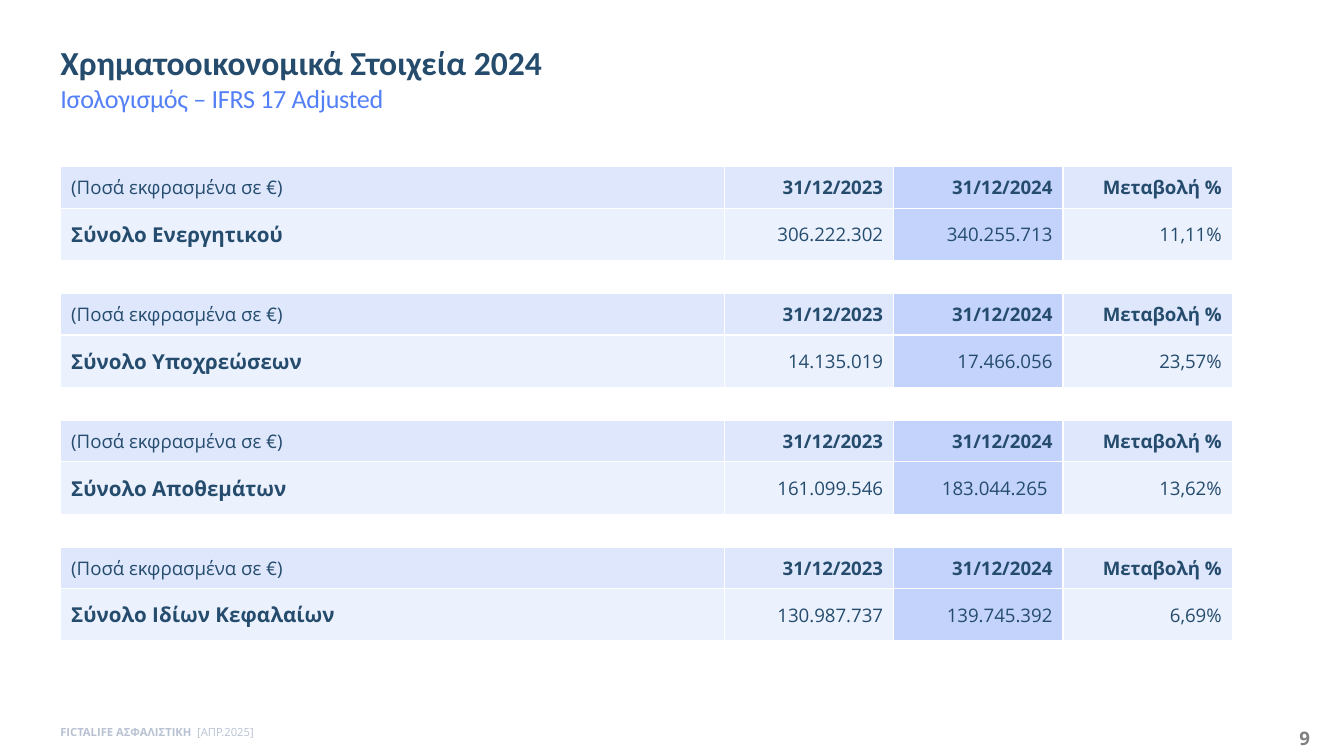
from lxml.etree import SubElement
from pptx import Presentation
from pptx.dml.color import RGBColor
from pptx.enum.text import MSO_ANCHOR, MSO_AUTO_SIZE, PP_ALIGN
from pptx.oxml.ns import qn
from pptx.util import Inches, Pt

NAVY, BLUE, WHITE = "254C6D", "5480F7", "FFFFFF"
HEAD, BODY, FOCUS = "DFE7FD", "ECF1FE", "C4D3FC"
SANS = "Open Sans"

LEFT, TOP, LAST = 0.45, 1.24, 4.07
HEIGHT = 0.71
COLS = [4.94, 1.26, 1.26, 1.26]
ROWS = [0.31, 0.39]
HEADER = ["(Ποσά εκφρασμένα σε €)", "31/12/2023", "31/12/2024", "Μεταβολή %"]
TOTALS = [
    ["Σύνολο Ενεργητικού", "306.222.302", "340.255.713", "11,11%"],
    ["Σύνολο Υποχρεώσεων", "14.135.019", "17.466.056", "23,57%"],
    ["Σύνολο Αποθεμάτων", "161.099.546", "183.044.265 ", "13,62%"],
    ["Σύνολο Ιδίων Κεφαλαίων", "130.987.737", "139.745.392", "6,69%"],
]
PITCH = (LAST - TOP) / (len(TOTALS) - 1)


def color(code):
    return RGBColor.from_string(code)


def add_run(para, text, size, code, bold=False, font=SANS):
    run = para.add_run()
    run.text = text
    run.font.size = Pt(size)
    run.font.name = font
    run.font.bold = bold
    run.font.color.rgb = color(code)
    return run


def set_title(slide):
    title = slide.shapes.title
    title.left, title.top = Inches(0.35), Inches(0.21)
    title.width, title.height = Inches(6.69), Inches(0.39)
    frame = title.text_frame
    frame.auto_size = MSO_AUTO_SIZE.NONE
    frame.vertical_anchor = MSO_ANCHOR.TOP
    frame.margin_left = frame.margin_right = Inches(0.1)
    frame.margin_top = frame.margin_bottom = Inches(0.1)
    para = frame.paragraphs[0]
    para.alignment = PP_ALIGN.LEFT
    add_run(para, "Χρηματοοικονομικά Στοιχεία 2024", 18, NAVY, True, "Calibri")
    para.add_line_break()
    sub = add_run(para, "Ισολογισμός – IFRS 17 Adjusted", 14, BLUE, False, "Calibri")
    sub.font._element.set("spc", "-20")


def add_label(slide, left, top, width, height, runs, wrap=True):
    box = slide.shapes.add_textbox(Inches(left), Inches(top), Inches(width), Inches(height))
    frame = box.text_frame
    frame.word_wrap = wrap
    frame.auto_size = MSO_AUTO_SIZE.SHAPE_TO_FIT_TEXT
    for run in runs:
        add_run(frame.paragraphs[0], *run)


def add_borders(cell, row, col):
    # The outer top and left edges are slightly heavier
    heavy = {"lnL": col == 0, "lnT": row == 0}
    props = cell._tc.get_or_add_tcPr()
    for side in ("lnL", "lnR", "lnT", "lnB"):
        width = Pt(1 if heavy.get(side) else 0.75)
        line = SubElement(props, qn("a:" + side), w=str(int(width)))
        fill = SubElement(line, qn("a:solidFill"))
        SubElement(fill, qn("a:srgbClr"), val=WHITE)


def fill_cell(cell, row, col, text):
    add_borders(cell, row, col)
    cell.fill.solid()
    cell.fill.fore_color.rgb = color(FOCUS if col == 2 else (HEAD, BODY)[row])
    cell.vertical_anchor = MSO_ANCHOR.MIDDLE
    cell.margin_left = cell.margin_right = Inches(0.08)
    cell.margin_top = cell.margin_bottom = 0
    para = cell.text_frame.paragraphs[0]
    para.alignment = PP_ALIGN.RIGHT if col else PP_ALIGN.LEFT
    # Bold: the dates in the header, the name in the total row
    bold = (row == 0) == (col > 0)
    add_run(para, text, 11 if row and not col else 10, NAVY, bold)


def add_total(slide, top, values):
    shape = slide.shapes.add_table(
        2, 4, Inches(LEFT), Inches(top), Inches(sum(COLS)), Inches(HEIGHT))
    table = shape.table
    table.first_row = table.horz_banding = False
    for col, width in enumerate(COLS):
        table.columns[col].width = Inches(width)
    for row, texts in enumerate([HEADER, values]):
        table.rows[row].height = Inches(ROWS[row])
        for col, text in enumerate(texts):
            fill_cell(table.cell(row, col), row, col, text)
    shape.height = Inches(HEIGHT)


def main():
    deck = Presentation()
    # Widescreen, 16 to 9
    deck.slide_width = Inches(10)
    deck.slide_height = deck.slide_width * 9 // 16
    slide = deck.slides.add_slide(deck.slide_layouts[5])
    set_title(slide)

    # Page number and footer
    add_label(slide, 9.57, 5.36, 0.36, 0.27, [("9", 10, "808080", True)])
    add_label(slide, 0.35, 5.35, 1.68, 0.2, [
        ("FICTALIFE ΑΣΦΑΛΙΣΤΙΚΗ  ", 6, "B8C2D2", True),
        ("[ΑΠΡ.2025]", 6, "B8C2D2")], wrap=False)

    # One small table for each balance sheet total
    for i, values in enumerate(TOTALS):
        add_total(slide, TOP + i * PITCH, values)
    deck.save("out.pptx")


if __name__ == "__main__":
    main()
